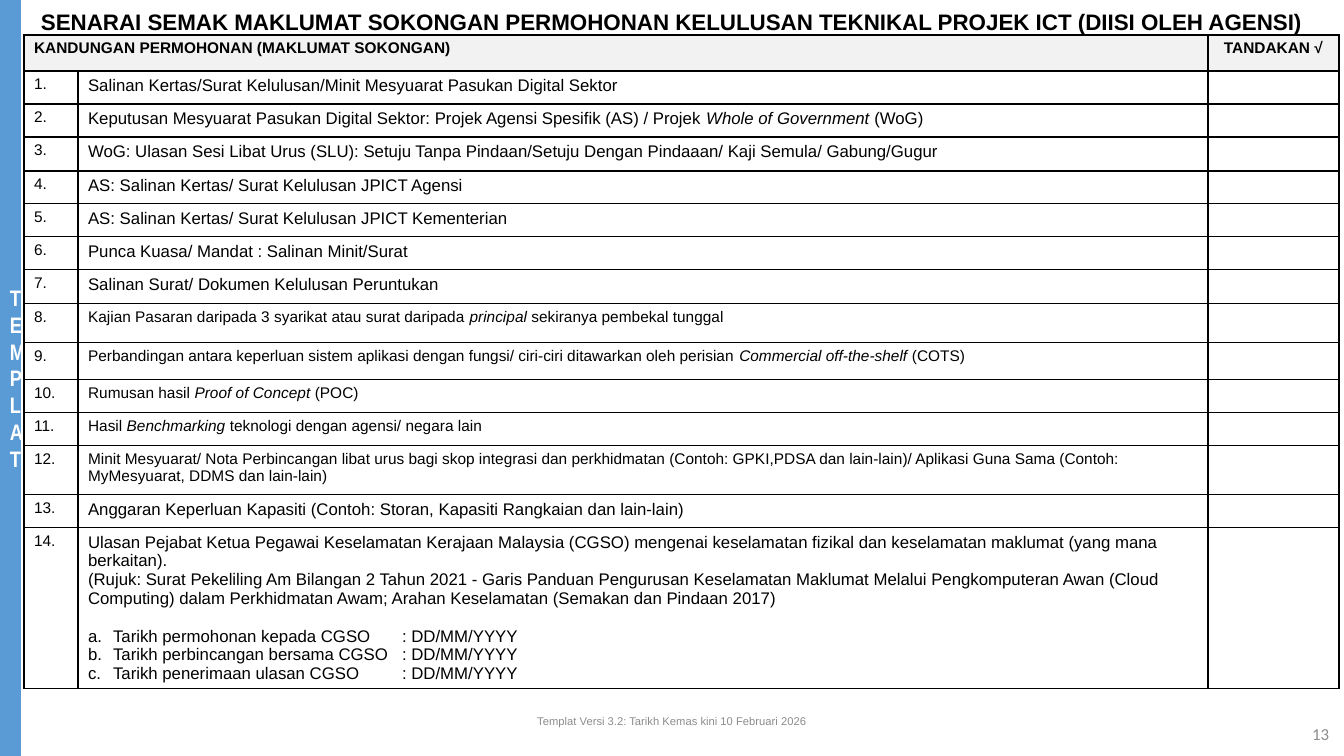
from lxml import etree
from pptx import Presentation
from pptx import util as u
from pptx.dml.color import RGBColor
from pptx.enum import shapes, text
from pptx.oxml.ns import qn

COLORS = {"bar": "5B9BD5", "head": "F2F2F2", "white": "FFFFFF",
          "black": "000000", "grey": "8C8C8C"}
TITLE = ("SENARAI SEMAK MAKLUMAT SOKONGAN PERMOHONAN KELULUSAN TEKNIKAL "
         "PROJEK ICT (DIISI OLEH AGENSI)")
HEADS = ("KANDUNGAN PERMOHONAN (MAKLUMAT SOKONGAN)", "TANDAKAN √")
HEAD_HEIGHT = 36
COLUMNS = (54, 1130, 131)

# Row height in px, text size in pt, text with *italic* parts
ITEMS = [
    (33, 12, "Salinan Kertas/Surat Kelulusan/Minit Mesyuarat Pasukan Digital Sektor"),
    (33, 12, "Keputusan Mesyuarat Pasukan Digital Sektor: Projek Agensi Spesifik (AS) / "
             "Projek *Whole of Government* (WoG)"),
    (34, 12, "WoG: Ulasan Sesi Libat Urus (SLU): Setuju Tanpa Pindaan/Setuju Dengan "
             "Pindaaan/ Kaji Semula/ Gabung/Gugur"),
    (33, 12, "AS: Salinan Kertas/ Surat Kelulusan JPICT Agensi"),
    (33, 12, "AS: Salinan Kertas/ Surat Kelulusan JPICT Kementerian"),
    (33, 12, "Punca Kuasa/ Mandat : Salinan Minit/Surat"),
    (34, 12, "Salinan Surat/ Dokumen Kelulusan Peruntukan"),
    (39, 11, "Kajian Pasaran daripada 3 syarikat atau surat daripada *principal* "
             "sekiranya pembekal tunggal"),
    (37, 11, "Perbandingan antara keperluan sistem aplikasi dengan fungsi/ ciri-ciri "
             "ditawarkan oleh perisian *Commercial off-the-shelf* (COTS)"),
    (33, 11, "Rumusan hasil *Proof of Concept* (POC)"),
    (33, 11, "Hasil *Benchmarking* teknologi dengan agensi/ negara lain"),
    (49, 11, "Minit Mesyuarat/ Nota Perbincangan libat urus bagi skop integrasi dan "
             "perkhidmatan (Contoh: GPKI,PDSA dan lain-lain)/ Aplikasi Guna Sama "
             "(Contoh: MyMesyuarat, DDMS dan lain-lain)"),
    (33, 12, "Anggaran Keperluan Kapasiti (Contoh: Storan, Kapasiti Rangkaian dan lain-lain)"),
    (161, 12, "Ulasan Pejabat Ketua Pegawai Keselamatan Kerajaan Malaysia (CGSO) mengenai "
              "keselamatan fizikal dan keselamatan maklumat (yang mana berkaitan)."),
]
REFERENCE = ("(Rujuk: Surat Pekeliling Am Bilangan 2 Tahun 2021 - Garis Panduan Pengurusan "
             "Keselamatan Maklumat Melalui Pengkomputeran Awan (Cloud Computing) dalam "
             "Perkhidmatan Awam; Arahan Keselamatan (Semakan dan Pindaan 2017)")
DATES = ["Tarikh permohonan kepada CGSO", "Tarikh perbincangan bersama CGSO",
         "Tarikh penerimaan ulasan CGSO"]
DATE_FORMAT = ": DD/MM/YYYY"
LEFT, CENTER, RIGHT = text.PP_ALIGN.LEFT, text.PP_ALIGN.CENTER, text.PP_ALIGN.RIGHT


def px(n):
    return u.Emu(round(n * 12192000 / 1344))


def rgb(name):
    return RGBColor.from_string(COLORS[name])


def write(p, words, size, bold=False, align=LEFT, color="black", font="Arial"):
    """Add runs to a paragraph; parts between asterisks are italic."""
    p.alignment = align
    for i, part in enumerate(words.split("*")):
        r = p.add_run()
        r.text = part
        f = r.font
        f.name, f.size, f.bold, f.italic = font, u.Pt(size), bold, i % 2 == 1
        f.color.rgb = rgb(color)


def style_cell(cell, fill):
    pr = cell._tc.get_or_add_tcPr()
    for side in ("a:lnL", "a:lnR", "a:lnT", "a:lnB"):
        ln = etree.SubElement(pr, qn(side), w=str(u.Pt(1)))
        solid = etree.SubElement(ln, qn("a:solidFill"))
        etree.SubElement(solid, qn("a:srgbClr"), val=COLORS["black"])
    cell.fill.solid()
    cell.fill.fore_color.rgb = rgb(fill)


def add_lettered(tf, words):
    """Add a paragraph numbered a., b., c. with a tab stop for the date."""
    p = tf.add_paragraph()
    pr = p._p.get_or_add_pPr()
    pr.set("marL", str(px(25)))
    pr.set("indent", str(-px(25)))
    etree.SubElement(pr, qn("a:buFont"), typeface="+mj-lt")
    etree.SubElement(pr, qn("a:buAutoNum"), type="alphaLcPeriod")
    tabs = etree.SubElement(pr, qn("a:tabLst"))
    etree.SubElement(tabs, qn("a:tab"), pos=str(px(314)), algn="l")
    write(p, words, 12)
    return p


def add_note(s, box, words, size, align, font):
    tf = s.shapes.add_textbox(*map(px, box)).text_frame
    tf.word_wrap = True
    tf.vertical_anchor = text.MSO_ANCHOR.MIDDLE
    write(tf.paragraphs[0], words, size, align=align, color="grey", font=font)


prs = Presentation()
prs.slide_width, prs.slide_height = px(1344), px(756)
s = prs.slides.add_slide(prs.slide_layouts[5])

title = s.shapes.title
title.left, title.top, title.width, title.height = map(px, (0, 3, 1344, 63))
tf = title.text_frame
tf.auto_size = text.MSO_AUTO_SIZE.NONE
tf.vertical_anchor = text.MSO_ANCHOR.TOP
write(tf.paragraphs[0], TITLE, 16, bold=True, align=CENTER)

bar = s.shapes.add_shape(shapes.MSO_SHAPE.RECTANGLE, 0, 0, px(21), px(756))
bar.shadow.inherit = False
bar.fill.solid()
bar.fill.fore_color.rgb = rgb("bar")
bar.line.fill.background()
tf = bar.text_frame
tf.word_wrap = True
tf.vertical_anchor = text.MSO_ANCHOR.MIDDLE
write(tf.paragraphs[0], "TEMPLAT", 16, True, CENTER, "white", "Arial Narrow")

heights = [HEAD_HEIGHT] + [item[0] for item in ITEMS]
table = s.shapes.add_table(len(heights), len(COLUMNS), px(24), px(35),
                           px(sum(COLUMNS)), px(sum(heights))).table
for column, width in zip(table.columns, COLUMNS):
    column.width = px(width)
for i, (row, height) in enumerate(zip(table.rows, heights)):
    row.height = px(height)
    for cell in row.cells:
        style_cell(cell, "white" if i else "head")
        cell.text_frame.paragraphs[0].font.size = u.Pt(11)

table.cell(0, 0).merge(table.cell(0, 1))
write(table.cell(0, 0).text_frame.paragraphs[0], HEADS[0], 11, bold=True)
write(table.cell(0, 2).text_frame.paragraphs[0], HEADS[1], 11, bold=True, align=CENTER)
for i, (_, size, words) in enumerate(ITEMS, 1):
    write(table.cell(i, 0).text_frame.paragraphs[0], f"{i}.", 11)
    write(table.cell(i, 1).text_frame.paragraphs[0], words, size)

tf = table.cell(len(ITEMS), 1).text_frame
write(tf.add_paragraph(), REFERENCE, 12)
date_lines = [add_lettered(tf, f"{label}\t{DATE_FORMAT}") for label in DATES]
date_lines[0].space_before = u.Pt(13.4)

add_note(s, (1037, 714, 302, 40), "13", 12, RIGHT, "Calibri")
add_note(s, (445, 701, 454, 40), "Templat Versi 3.2: Tarikh Kemas kini 10 Februari 2026",
         8, CENTER, "Arial")
prs.save("out.pptx")
